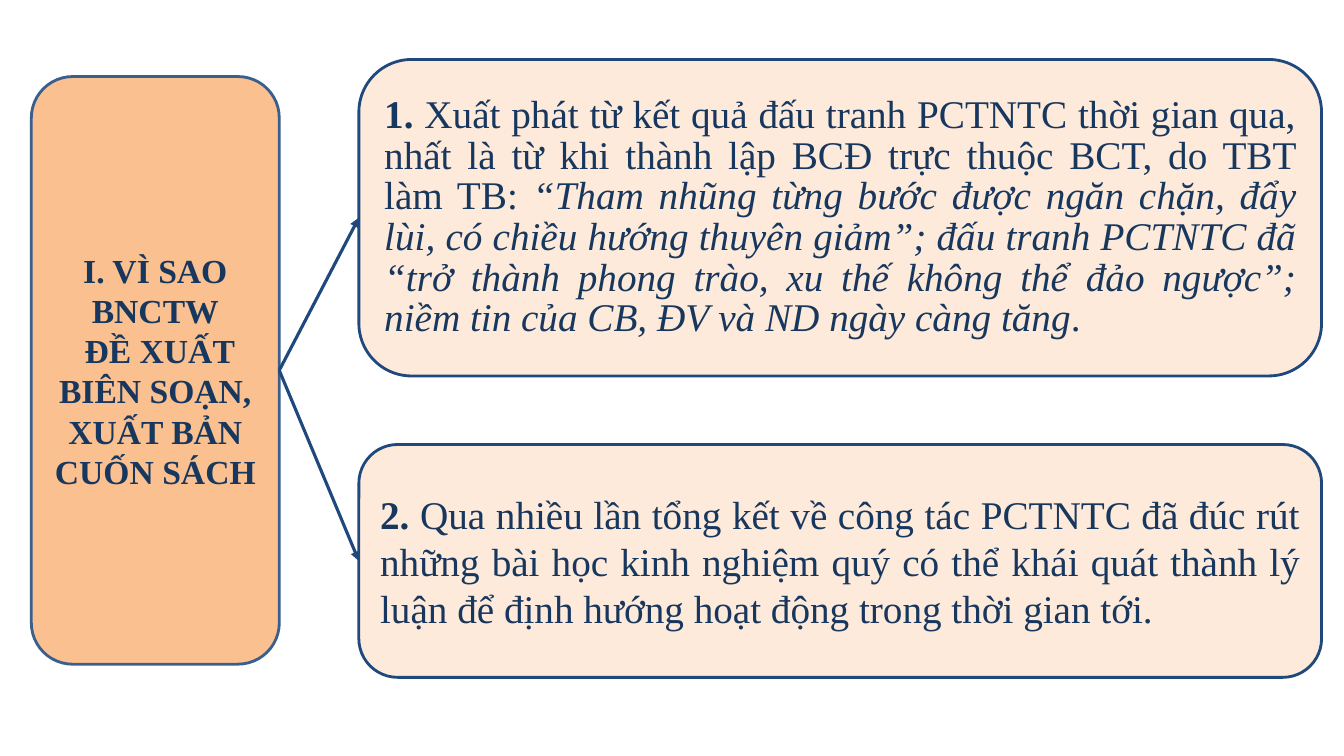
import pptx
import pptx.util
import pptx.dml.color
import pptx.enum.shapes
import pptx.enum.text
import pptx.oxml.ns
import lxml.etree

INK, EDGE, RIM = "17375E", "1F497D", "3A5F8C"
PEACH, CREAM = "FAC090", "FDEADA"
ALIGN = pptx.enum.text.PP_ALIGN


def tint(code):
    return pptx.dml.color.RGBColor.from_string(code)


class Deck:
    """Holds the style and the current slide; places are in percent of its size."""
    font = "Times New Roman"

    def __init__(self):
        self.file = pptx.Presentation()
        self.file.slide_width = pptx.util.Inches(13.33)
        self.file.slide_height = pptx.util.Inches(7.5)
        self.slide = self.file.slides.add_slide(self.file.slide_layouts[6])

    def place(self, x, y, w, h):
        wide, high = self.file.slide_width, self.file.slide_height
        return [round(part * size / 100)
                for part, size in zip((x, y, w, h), (wide, high, wide, high))]

    def box(self, spot, fill, line):
        kind = pptx.enum.shapes.MSO_SHAPE.ROUNDED_RECTANGLE
        box = self.slide.shapes.add_shape(kind, *self.place(*spot))
        box.shadow.inherit = False
        box.fill.solid()
        box.fill.fore_color.rgb = tint(fill)
        box.line.color.rgb = tint(line)
        box.line.width = pptx.util.Pt(2)
        return box

    def text(self, box, paras, size, align, lead=None):
        """Each paragraph is a list of (words, style); style holds b and i."""
        frame = box.text_frame
        frame.word_wrap = True
        frame.vertical_anchor = pptx.enum.text.MSO_ANCHOR.MIDDLE
        for n, runs in enumerate(paras):
            para = frame.add_paragraph() if n else frame.paragraphs[0]
            para.alignment = align
            if lead:
                para.line_spacing = pptx.util.Pt(lead)
            for words, style in runs:
                run = para.add_run()
                run.text = words
                font = run.font
                font.name, font.size = self.font, pptx.util.Pt(size)
                font.bold, font.italic = "b" in style, "i" in style
                font.color.rgb = tint(INK)

    def arrow(self, start, end):
        """Runs from the right side of one box to the left side of another."""
        kind = pptx.enum.shapes.MSO_CONNECTOR.STRAIGHT
        arrow = self.slide.shapes.add_connector(kind, 0, 0, 0, 0)
        arrow.begin_connect(start, 3)
        arrow.end_connect(end, 1)
        arrow.line.color.rgb = tint(EDGE)
        arrow.line.width = pptx.util.Pt(2.25)
        name = pptx.oxml.ns.qn
        tip = lxml.etree.SubElement(arrow.line._get_or_add_ln(), name("a:tailEnd"))
        tip.set("type", "triangle")
        lxml.etree.SubElement(arrow._element.spPr, name("a:effectLst"))


def main():
    deck = Deck()

    # Topic on the left
    topic = deck.box((2.33, 10.13, 18.45, 77.73), PEACH, RIM)
    deck.text(topic, [
        [("I. VÌ SAO BNCTW", "b")],
        [(" ĐỀ XUẤT BIÊN SOẠN, XUẤT BẢN CUỐN SÁCH", "b")],
    ], 24, ALIGN.CENTER)

    # Reasons on the right: top, height, line pitch, runs
    reasons = [
        (58.8, 30.8, None, [
            ("2. ", "b"),
            ("Qua nhiều lần tổng kết về công tác PCTNTC đã đúc rút những bài học "
             "kinh nghiệm quý có thể khái quát thành lý luận để định hướng hoạt "
             "động trong thời gian tới.", "")]),
        (7.87, 41.87, 29, [
            ("1. ", "b"),
            ("Xuất phát từ kết quả đấu tranh PCTNTC thời gian qua, nhất là từ khi "
             "thành lập BCĐ trực thuộc BCT, do TBT làm TB: ", ""),
            ("“Tham nhũng từng bước được ngăn chặn, đẩy lùi, có chiều hướng thuyên "
             "giảm”; đấu tranh PCTNTC đã “trở thành phong trào, xu thế không thể "
             "đảo ngược”; niềm tin của CB, ĐV và ND ngày càng tăng", "i"),
            (".", "")]),
    ]
    for top, high, lead, runs in reasons:
        box = deck.box((26.7, top, 71.63, high), CREAM, EDGE)
        deck.text(box, [runs], 28, ALIGN.JUSTIFY, lead)
        deck.arrow(topic, box)

    deck.file.save("out.pptx")


if __name__ == "__main__":
    main()
